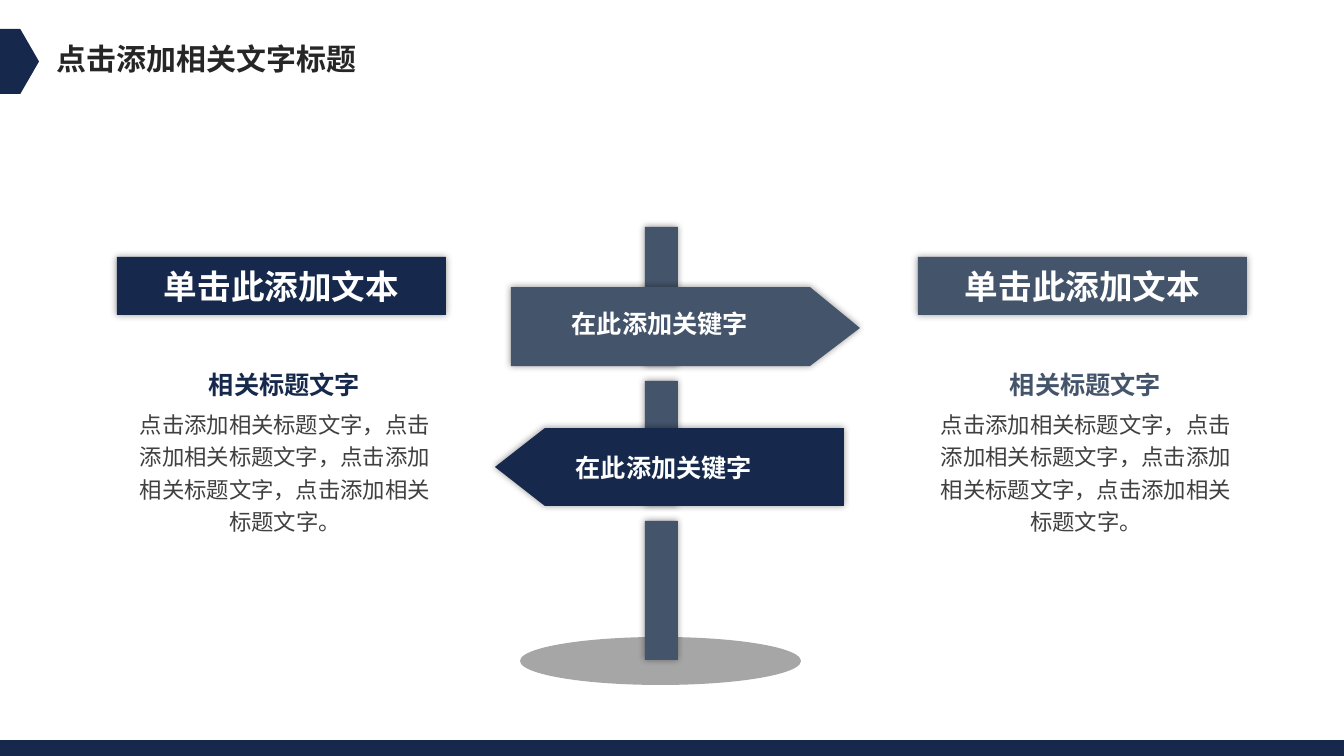
"""Build a signpost slide with a text column on either side."""
from lxml import etree
from pptx import Presentation, util as u
from pptx.dml.color import RGBColor
from pptx.enum import shapes as kinds, text as t
from pptx.oxml import ns

THEME = {
    "navy": "16294C", "slate": "44546A", "grey": "A6A6A6", "white": "FFFFFF",
    "ink": "262626", "body": "404040", "font": "Noto Sans CJK SC",
    "sizes": {"heading": 21.4, "banner": 24, "label": 18, "body": 16},
}
PX = 914400 / 100.8
WIDTH, HEIGHT = 1344, 756
HEADING = "点击添加相关文字标题"
COLUMNS = [
    {"left": 117, "color": "navy", "banner": "单击此添加文本", "subtitle": "相关标题文字",
     "body": "点击添加相关标题文字，" * 3 + "点击添加相关标题文字。"},
    {"left": 918, "color": "slate", "banner": "单击此添加文本", "subtitle": "相关标题文字",
     "body": "点击添加相关标题文字，" * 3 + "点击添加相关标题文字。"},
]
POSTS = [(227, 139), (381, 125), (521, 139)]
SIGNS = [
    {"label": "在此添加关键字", "color": "navy", "tip": 495, "shoulder": 545, "end": 844,
     "top": 428, "middle": 467, "bottom": 506, "label_at": (563, 447)},
    {"label": "在此添加关键字", "color": "slate", "tip": 860, "shoulder": 810, "end": 511,
     "top": 287, "middle": 328, "bottom": 366, "label_at": (559, 303)},
]


def emu(*lengths):
    return [u.Emu(round(length * PX)) for length in lengths]


def rgb(color):
    return RGBColor.from_string(THEME[color])


def paint(shape, color, glow=False):
    shape.fill.solid()
    shape.fill.fore_color.rgb = rgb(color)
    shape.line.fill.background()
    shape.shadow.inherit = False
    if glow:
        effects = shape._element.spPr.find(ns.qn("a:effectLst"))
        shadow = etree.SubElement(effects, ns.qn("a:outerShdw"), blurRad=str(u.Pt(5)),
                                  dist="0", dir="0", algn="ctr", rotWithShape="0")
        black = etree.SubElement(shadow, ns.qn("a:srgbClr"), val="000000")
        etree.SubElement(black, ns.qn("a:alpha"), val="40000")
    return shape


def add_block(parent, kind, box, color, glow=False):
    return paint(parent.add_shape(kind, *emu(*box)), color, glow)


def write(shape, words, size, color, bold=True, frame=None, paragraph=None):
    line = shape.text_frame.paragraphs[0]
    run = line.add_run()
    run.text = words
    formats = [
        (shape.text_frame, frame or {}),
        (line, paragraph or {}),
        (run.font, {"name": THEME["font"], "size": u.Pt(THEME["sizes"][size]), "bold": bold}),
    ]
    for target, values in formats:
        for key, value in values.items():
            setattr(target, key, value)
    run.font.color.rgb = rgb(color)
    etree.SubElement(run.font._element, ns.qn("a:ea"), typeface=THEME["font"])


def add_words(parent, box, words, size, color, bold=True, wrap=False, **paragraph):
    frame = {"word_wrap": wrap, "auto_size": t.MSO_AUTO_SIZE.SHAPE_TO_FIT_TEXT}
    write(parent.add_textbox(*emu(*box)), words, size, color, bold, frame, paragraph)


def add_column(parent, column):
    left, color = column["left"], column["color"]
    centre = {"alignment": t.PP_ALIGN.CENTER}
    banner = add_block(parent, kinds.MSO_SHAPE.RECTANGLE, (left, 257, 329, 58), color, True)
    write(banner, column["banner"], "banner", "white",
          frame={"vertical_anchor": t.MSO_ANCHOR.MIDDLE}, paragraph=centre)
    copy = parent.add_group_shape().shapes
    add_words(copy, (left + 82, 355, 173, 46), column["subtitle"], "label", color,
              line_spacing=1.3)
    add_words(copy, (left + 7, 401, 322, 140), column["body"], "body", "body",
              bold=False, wrap=True, line_spacing=1.2, **centre)


def add_signpost(parent):
    signpost = parent.add_group_shape().shapes
    add_block(signpost, kinds.MSO_SHAPE.OVAL, (520, 637, 281, 48), "grey")
    for top, height in POSTS:
        add_block(signpost, kinds.MSO_SHAPE.RECTANGLE, (645, top, 33, height), "slate", True)
    for sign in SIGNS:
        outline = signpost.build_freeform(sign["tip"], sign["middle"], scale=PX)
        outline.add_line_segments([
            (sign["shoulder"], sign["top"]), (sign["end"], sign["top"]),
            (sign["end"], sign["bottom"]), (sign["shoulder"], sign["bottom"]),
        ])
        paint(outline.convert_to_shape(), sign["color"], True)
    for sign in SIGNS:
        add_words(signpost, (*sign["label_at"], 199, 40), sign["label"], "label", "white",
                  alignment=t.PP_ALIGN.RIGHT)


def main():
    deck = Presentation()
    deck.slide_width, deck.slide_height = emu(WIDTH, HEIGHT)
    parts = deck.slides.add_slide(deck.slide_layouts[6]).shapes
    add_signpost(parts)
    for column in COLUMNS:
        add_column(parts, column)
    marker = add_block(parts, kinds.MSO_SHAPE.PENTAGON, (0, 29, 39, 65), "navy")
    marker.adjustments[0] = 0.48
    add_words(parts, (47, 36, 323, 46), HEADING, "heading", "ink")
    add_block(parts, kinds.MSO_SHAPE.RECTANGLE, (0, 740, WIDTH, 16), "navy")
    deck.save("out.pptx")


if __name__ == "__main__":
    main()
